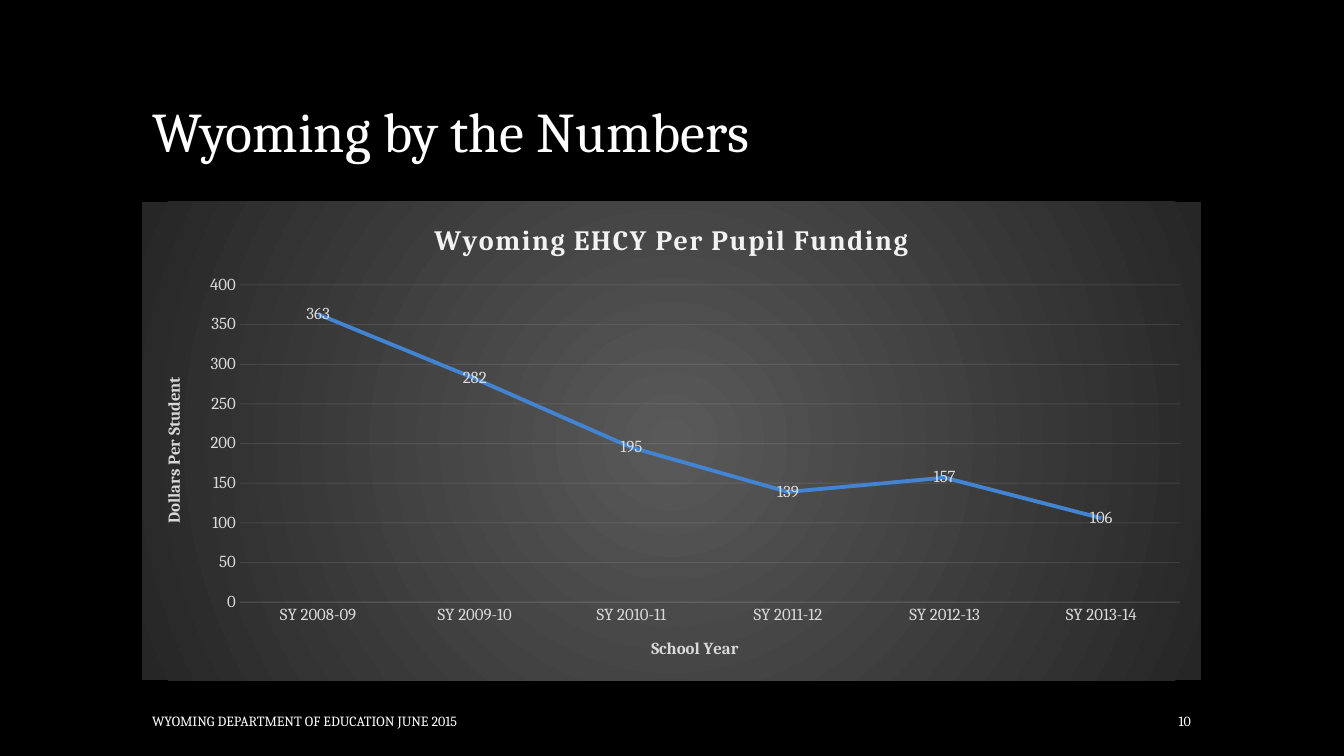
from lxml import etree
from pptx import Presentation
from pptx.chart.data import CategoryChartData
from pptx.dml.color import RGBColor
from pptx.enum.chart import XL_CHART_TYPE as ChartType
from pptx.enum.chart import XL_LABEL_POSITION as LabelPosition
from pptx.enum.chart import XL_MARKER_STYLE as MarkerStyle
from pptx.enum.chart import XL_TICK_MARK as TickMark
from pptx.enum.text import MSO_ANCHOR as Anchor
from pptx.enum.text import PP_ALIGN as Align
from pptx.oxml import parse_xml
from pptx.oxml.ns import nsdecls, qn
from pptx.util import Inches, Pt

BLACK = RGBColor(0x00, 0x00, 0x00)
WHITE = RGBColor(0xFF, 0xFF, 0xFF)
PALE = RGBColor(0xF2, 0xF2, 0xF2)
SILVER = RGBColor(0xD9, 0xD9, 0xD9)
BLUE = RGBColor(0x42, 0x83, 0xD2)
PANEL_CENTER = RGBColor(0x59, 0x59, 0x59)
PANEL_EDGE = RGBColor(0x26, 0x26, 0x26)
FONT = "Cambria"
LEFT = 1.41

FUNDING = {
    "SY 2008-09": 363,
    "SY 2009-10": 282,
    "SY 2010-11": 195,
    "SY 2011-12": 139,
    "SY 2012-13": 157,
    "SY 2013-14": 106,
}


def style_font(font, size, color, bold=False):
    font.name = FONT
    font.size = Pt(size)
    font.bold = bold
    font.color.rgb = color


def add_text(page, text, left, top, width, height, size=10,
             anchor=Anchor.MIDDLE, align=Align.LEFT, line_spacing=1.0):
    box = page.shapes.add_textbox(Inches(left), Inches(top), Inches(width), Inches(height))
    frame = box.text_frame
    frame.word_wrap = True
    frame.vertical_anchor = anchor
    para = frame.paragraphs[0]
    para.alignment = align
    para.line_spacing = line_spacing
    span = para.add_run()
    span.text = text
    style_font(span.font, size, WHITE)


def set_title(owner, text, size, color, spacing=0):
    owner.has_title = True
    para = owner_title(owner).text_frame.paragraphs[0]
    span = para.add_run()
    span.text = text
    style_font(span.font, size, color, bold=True)
    span.font._element.set("spc", str(spacing))


def owner_title(owner):
    return owner.chart_title if hasattr(owner, "chart_title") else owner.axis_title


def set_faint_line(line, holder):
    line.width = Pt(0.75)
    line.color.rgb = PALE
    for color in holder.xpath("./c:spPr/a:ln//a:srgbClr"):
        etree.SubElement(color, qn("a:alpha")).set("val", "10000")


def style_axis(axis, title):
    axis.major_tick_mark = TickMark.NONE
    axis.minor_tick_mark = TickMark.NONE
    style_font(axis.tick_labels.font, 12, SILVER)
    set_title(axis, title, 12, SILVER)


def fill_panel(chart):
    panel = parse_xml(
        f'<c:spPr {nsdecls("c", "a")}><a:gradFill><a:gsLst>'
        f'<a:gs pos="0"><a:srgbClr val="{PANEL_CENTER}"/></a:gs>'
        f'<a:gs pos="100000"><a:srgbClr val="{PANEL_EDGE}"/></a:gs>'
        '</a:gsLst><a:path path="circle">'
        '<a:fillToRect l="50000" t="50000" r="50000" b="50000"/>'
        '</a:path></a:gradFill><a:ln><a:noFill/></a:ln></c:spPr>'
    )
    chart._chartSpace.find(qn("c:chart")).addnext(panel)


def style_series(series):
    series.smooth = False
    series.marker.style = MarkerStyle.NONE
    series.format.line.color.rgb = BLUE
    series.format.line.width = Pt(2.75)
    labels = series.data_labels
    labels.show_value = True
    labels.position = LabelPosition.CENTER
    style_font(labels.font, 12, SILVER)


def add_funding_chart(page):
    data = CategoryChartData()
    data.categories = list(FUNDING)
    data.add_series("Series 1", list(FUNDING.values()))
    chart = page.shapes.add_chart(
        ChartType.LINE, Inches(LEFT), Inches(2), Inches(10.5), Inches(4.75), data
    ).chart
    style_font(chart.font, 10, WHITE)
    chart.has_legend = False
    set_title(chart, "Wyoming EHCY Per Pupil Funding", 20, PALE, spacing=100)
    chart.plots[0].vary_by_categories = False
    style_series(chart.plots[0].series[0])

    years, dollars = chart.category_axis, chart.value_axis
    style_axis(years, "School Year")
    set_faint_line(years.format.line, years._element)
    style_axis(dollars, "Dollars Per Student")
    dollars.minimum_scale, dollars.maximum_scale, dollars.major_unit = 0, 400, 50
    dollars.format.line.fill.background()
    dollars.has_major_gridlines = True
    set_faint_line(dollars.major_gridlines.format.line,
                   dollars._element.find(qn("c:majorGridlines")))
    fill_panel(chart)


def main():
    deck = Presentation()
    deck.slide_width, deck.slide_height = Inches(13.33), Inches(7.5)
    page = deck.slides.add_slide(deck.slide_layouts[6])
    page.background.fill.solid()
    page.background.fill.fore_color.rgb = BLACK
    add_text(page, "Wyoming by the Numbers", LEFT, 0.42, 10.5, 1.25,
             size=40, anchor=Anchor.BOTTOM, line_spacing=0.8)
    add_funding_chart(page)
    add_text(page, "WYOMING DEPARTMENT OF EDUCATION JUNE 2015", LEFT, 7, 6.92, 0.3)
    add_text(page, "10", 10.58, 7, 1.33, 0.3, align=Align.RIGHT)
    deck.save("out.pptx")


if __name__ == "__main__":
    main()
